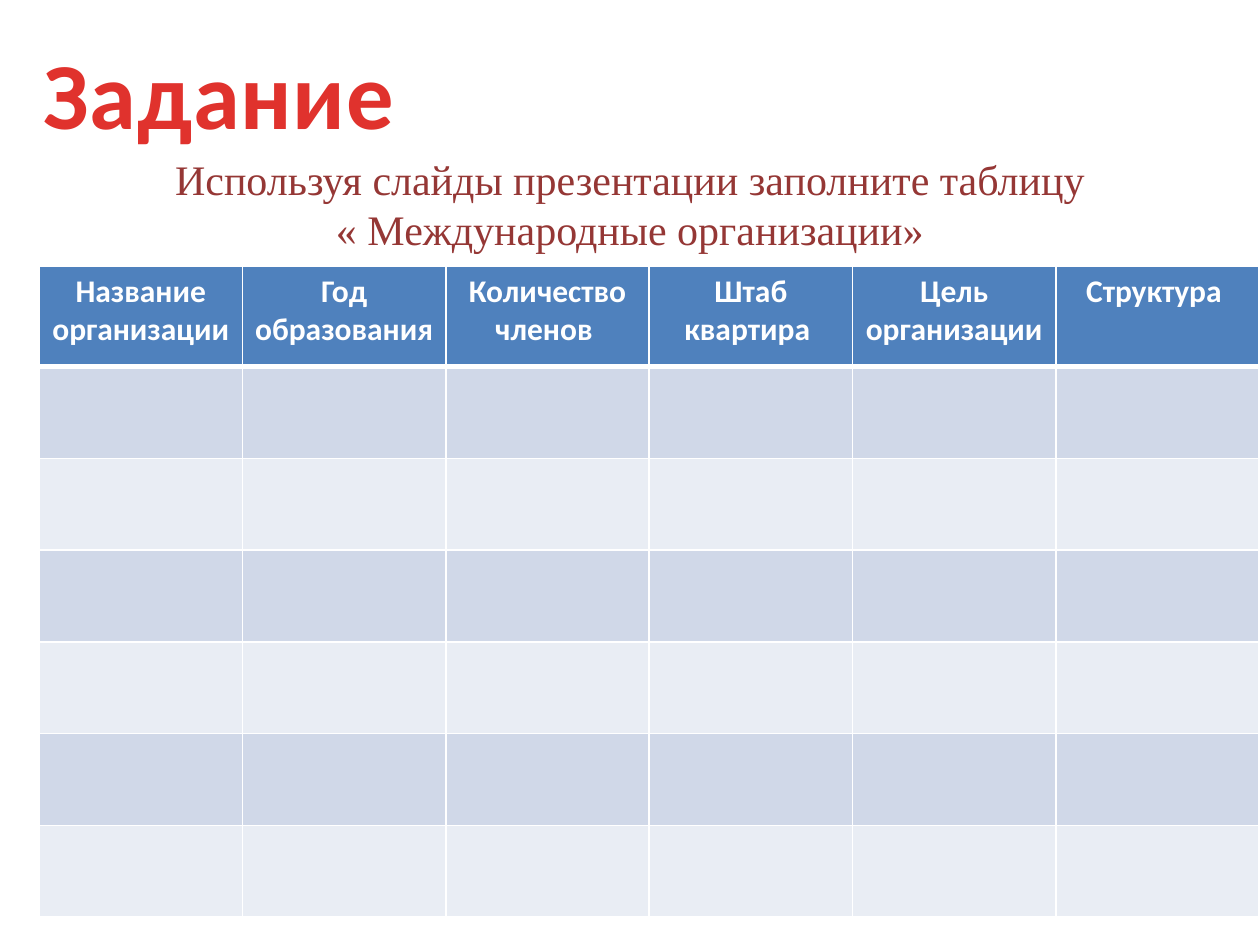
from pptx import Presentation
from pptx.dml.color import RGBColor as RGB
from pptx.enum.text import MSO_AUTO_SIZE as AUTO, PP_ALIGN as ALIGN
from pptx.oxml.ns import qn
from pptx.util import Cm, Pt
from lxml.etree import SubElement

COLORS = {
    "title": "E0322D",
    "task": "953735",
    "header": "4F81BD",
    "band_dark": "D0D8E8",
    "band_light": "E9EDF4",
    "white": "FFFFFF",
}
HEADERS = [
    ["Название организации"],
    ["Год образования"],
    ["Количество", "членов "],
    ["Штаб квартира "],
    ["Цель организации "],
    ["Структура "],
]
BODY_ROWS = 6


class SlideBuilder:
    """Holds the style and the current slide, and adds its elements."""

    def __init__(self, prs, colors):
        self.colors = colors
        self.s = prs.slides.add_slide(prs.slide_layouts[6])

    def rgb(self, name):
        return RGB.from_string(self.colors[name])

    def add_lines(self, tf, lines, size, color, font="Calibri", bold=False, spacing=0):
        for i, line in enumerate(lines):
            p = tf.add_paragraph() if i else tf.paragraphs[0]
            p.alignment = ALIGN.CENTER
            r = p.add_run()
            r.text = line
            r.font.name = font
            r.font.size = Pt(size)
            r.font.bold = bold
            r.font.color.rgb = self.rgb(color)
            if spacing:
                r._r.get_or_add_rPr().set("spc", str(spacing))

    def text(self, x, y, w, h, lines, size, color, wrap=True, **style):
        sp = self.s.shapes.add_textbox(Cm(x), Cm(y), Cm(w), Cm(h))
        tf = sp.text_frame
        tf.word_wrap = wrap
        tf.auto_size = AUTO.SHAPE_TO_FIT_TEXT
        self.add_lines(tf, lines, size, color, **style)

    def borders(self, cell, bottom):
        tc_pr = cell._tc.get_or_add_tcPr()
        widths = {"lnL": 1, "lnR": 1, "lnT": 1, "lnB": bottom}
        for i, (side, width) in enumerate(widths.items()):
            ln = SubElement(tc_pr, qn(f"a:{side}"), w=str(int(Pt(width))))
            fill = SubElement(ln, qn("a:solidFill"))
            SubElement(fill, qn("a:srgbClr"), val=self.colors["white"])
            tc_pr.insert(i, ln)

    def table(self, x, y, col_w, head_h, row_h, headers, body_rows):
        cols = len(headers)
        tbl = self.s.shapes.add_table(
            body_rows + 1, cols, Cm(x), Cm(y),
            Cm(col_w * cols), Cm(head_h + row_h * body_rows),
        ).table
        for col in tbl.columns:
            col.width = Cm(col_w)
        for i, row in enumerate(tbl.rows):
            row.height = Cm(row_h if i else head_h)
            band = "band_dark" if i % 2 else "band_light"
            for cell in row.cells:
                cell.fill.solid()
                cell.fill.fore_color.rgb = self.rgb(band if i else "header")
                self.borders(cell, bottom=1 if i else 3)
        for cell, lines in zip(tbl.rows[0].cells, headers):
            self.add_lines(cell.text_frame, lines, 18, "white", bold=True)


def main():
    prs = Presentation()
    prs.slide_width, prs.slide_height = Cm(25.4), Cm(19.05)
    s = SlideBuilder(prs, COLORS)
    s.text(0.58, 0.58, 7.67, 2.57, ["Задание"], 54, "title",
           wrap=False, bold=True, spacing=50)
    s.text(0, 2.97, 25.4, 2.31,
           ["Используя слайды презентации заполните таблицу",
            "« Международные организации»"],
           24, "task", font="Times New Roman")
    s.table(0.79, 5.36, 4.1, 2.03, 1.85, HEADERS, BODY_ROWS)
    prs.save("out.pptx")


if __name__ == "__main__":
    main()
